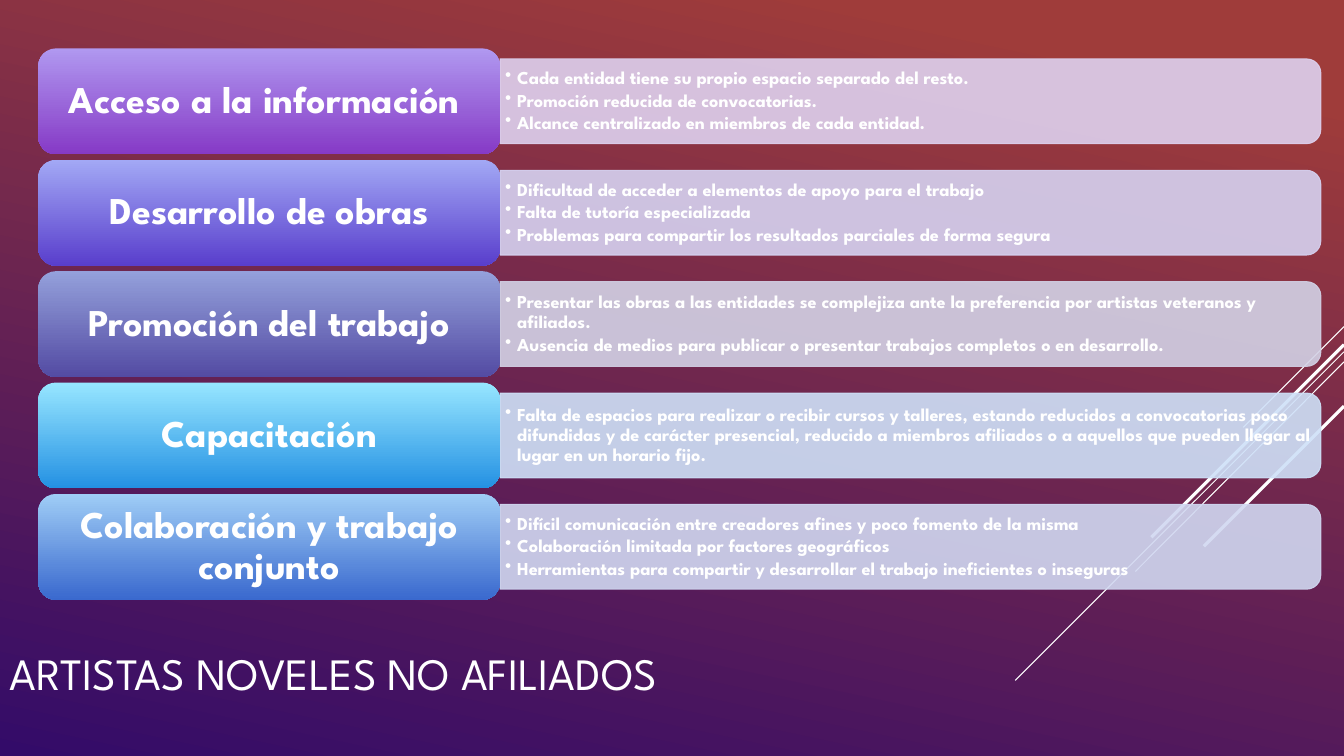
from dataclasses import dataclass

from lxml.etree import SubElement
from pptx import Presentation
from pptx.dml.color import RGBColor
from pptx.enum.shapes import MSO_CONNECTOR, MSO_SHAPE
from pptx.enum.text import MSO_ANCHOR, PP_ALIGN
from pptx.oxml.ns import qn
from pptx.util import Inches, Pt


@dataclass(frozen=True)
class Theme:
    font: str = "League Spartan"
    white: str = "FFFFFF"
    sky_top: str = "9F3C3A"
    sky_bottom: str = "330B69"
    title_size: int = 32
    header_size: int = 27
    bullet_size: int = 13
    panel_opacity: int = 90


THEME = Theme()

# Row geometry, in inches
HEADER_LEFT, HEADER_WIDTH, HEADER_HEIGHT = 0.38, 4.58, 1.05
FIRST_TOP, LAST_TOP = 0.48, 4.9
PANEL_LEFT = HEADER_LEFT + HEADER_WIDTH
PANEL_WIDTH, PANEL_HEIGHT = 8.14, 0.84
BULLETS_WIDTH, BULLETS_HEIGHT = 8.1, 0.76
HEADER_INSET = 0.05

# Header text, header gradient, panel colour, bullets
NEEDS = [
    ("Acceso a la información ", ("B098F0", "863AC6"), "DED1EF", [
        "Cada entidad tiene su propio espacio separado del resto.",
        "Promoción reducida de convocatorias.",
        "Alcance centralizado en miembros de cada entidad.",
    ]),
    ("Desarrollo de obras", ("A2A8F5", "593ECC"), "D6D2F1", [
        "Dificultad de acceder a elementos de apoyo para el trabajo",
        "Falta de tutoría especializada",
        "Problemas para compartir los resultados parciales de forma segura",
    ]),
    ("Promoción del trabajo", ("94A0DB", "534BA3"), "D3D2E6", [
        "Presentar las obras a las entidades se complejiza ante la preferencia "
        "por artistas veteranos y afiliados.",
        "Ausencia de medios para publicar o presentar trabajos completos o en desarrollo.",
    ]),
    ("Capacitación", ("97E6FF", "2491E3"), "CFE1F8", [
        "Falta de espacios para realizar o recibir cursos y talleres, estando "
        "reducidos a convocatorias poco difundidas y de carácter presencial, "
        "reducido a miembros afiliados o a aquellos que pueden llegar al lugar "
        "en un horario fijo.",
    ]),
    ("Colaboración y trabajo conjunto", ("9FCDF6", "3A69CE"), "D1D8F1", [
        "Difícil comunicación entre creadores afines y poco fomento de la misma",
        "Colaboración limitada por factores geográficos",
        "Herramientas para compartir y desarrollar el trabajo ineficientes o inseguras",
    ]),
]

# Start x, start y, end x, end y, width in points
RAYS = [
    (13.33, 3.24, 12.33, 4.24, 0.75),
    (13.33, 3.49, 10.07, 6.75, 0.75),
    (13.33, 3.59, 11.26, 5.67, 0.75),
    (13.33, 3.42, 11.42, 5.33, 2.25),
    (13.33, 4.03, 11.94, 5.42, 2.25),
]


def apply_format(target, values):
    for name, value in values.items():
        setattr(target, name, value)


def fill_gradient(fill, colors, angle, first_position=0):
    fill.gradient()
    fill.gradient_angle = 360 - angle  # python-pptx counts counter-clockwise
    for stop, color, position in zip(fill.gradient_stops, colors, (first_position, 1)):
        stop.color.rgb = RGBColor.from_string(color)
        stop.position = position


def fill_translucent(fill, color):
    fill.solid()
    fill.fore_color.rgb = RGBColor.from_string(color)


def add_text(slide, box, lines, size, bold=True, inset=(0.1, 0.05),
             paragraph_format=None, bulleted=False):
    frame = slide.shapes.add_textbox(*map(Inches, box)).text_frame
    side, end = map(Inches, inset)
    apply_format(frame, {
        "word_wrap": True, "vertical_anchor": MSO_ANCHOR.MIDDLE,
        "margin_left": side, "margin_right": side,
        "margin_top": end, "margin_bottom": end,
    })
    for index, line in enumerate(lines):
        paragraph = frame.paragraphs[0] if index == 0 else frame.add_paragraph()
        apply_format(paragraph, paragraph_format or {})
        run = paragraph.add_run()
        run.text = line
        apply_format(run.font, {"name": THEME.font, "size": Pt(size), "bold": bold})
        run.font.color.rgb = RGBColor.from_string(THEME.white)
        if bulleted:
            add_bullet(paragraph)


def add_bullet(paragraph):
    properties = paragraph._p.get_or_add_pPr()
    properties.set("marL", str(Inches(0.12)))
    properties.set("indent", str(Inches(-0.12)))
    SubElement(properties, qn("a:buChar")).set("char", "•")


def add_ray(slide, start_x, start_y, end_x, end_y, width):
    ray = slide.shapes.add_connector(
        MSO_CONNECTOR.STRAIGHT, *map(Inches, (start_x, start_y, end_x, end_y)))
    ray.line.color.rgb = RGBColor.from_string(THEME.white)
    ray.line.width = Pt(width)
    SubElement(ray._element.spPr, qn("a:effectLst"))


def add_panel(slide, middle, color):
    # Drawn upright, then turned so that the rounded corners face right
    center = PANEL_LEFT + PANEL_WIDTH / 2
    panel = slide.shapes.add_shape(
        MSO_SHAPE.ROUND_2_SAME_RECTANGLE,
        Inches(center - PANEL_HEIGHT / 2), Inches(middle - PANEL_WIDTH / 2),
        Inches(PANEL_HEIGHT), Inches(PANEL_WIDTH))
    panel.rotation = 90
    panel.shadow.inherit = False
    for fill in (panel.fill, panel.line.fill):
        fill_translucent(fill, color)
    panel.line.width = Pt(0.75)
    for shade in panel._element.spPr.iter(qn("a:srgbClr")):
        SubElement(shade, qn("a:alpha")).set("val", str(THEME.panel_opacity * 1000))


def add_header(slide, top, text, colors):
    header = slide.shapes.add_shape(
        MSO_SHAPE.ROUNDED_RECTANGLE,
        *map(Inches, (HEADER_LEFT, top, HEADER_WIDTH, HEADER_HEIGHT)))
    header.shadow.inherit = False
    header.line.fill.background()
    fill_gradient(header.fill, colors, 90)
    box = (HEADER_LEFT + HEADER_INSET, top + HEADER_INSET,
           HEADER_WIDTH - 2 * HEADER_INSET, HEADER_HEIGHT - 2 * HEADER_INSET)
    add_text(slide, box, [text], THEME.header_size, inset=(0.11, 0.06),
             paragraph_format={"alignment": PP_ALIGN.CENTER, "line_spacing": 0.9})


def add_need(slide, top, header, colors, panel_color, bullets):
    middle = top + HEADER_HEIGHT / 2
    add_panel(slide, middle, panel_color)
    box = (PANEL_LEFT, middle - BULLETS_HEIGHT / 2, BULLETS_WIDTH, BULLETS_HEIGHT)
    add_text(slide, box, bullets, THEME.bullet_size, inset=(0.05, 0.03),
             paragraph_format={"line_spacing": 0.9, "space_after": Pt(2)},
             bulleted=True)
    add_header(slide, top, header, colors)


def main():
    deck = Presentation()
    apply_format(deck, {"slide_width": Inches(13.33), "slide_height": Inches(7.5)})
    slide = deck.slides.add_slide(deck.slide_layouts[6])

    # Backdrop
    fill_gradient(slide.background.fill, (THEME.sky_top, THEME.sky_bottom), 102, 0.1)
    for ray in RAYS:
        add_ray(slide, *ray)

    # Title
    add_text(slide, (0, 5.85, 9.33, 1.65), ["ARTISTAS NOVELES NO AFILIADOS"],
             THEME.title_size, bold=False)

    # Needs, one row each
    pitch = (LAST_TOP - FIRST_TOP) / (len(NEEDS) - 1)
    for row, need in enumerate(NEEDS):
        add_need(slide, FIRST_TOP + row * pitch, *need)

    deck.save("out.pptx")


if __name__ == "__main__":
    main()
